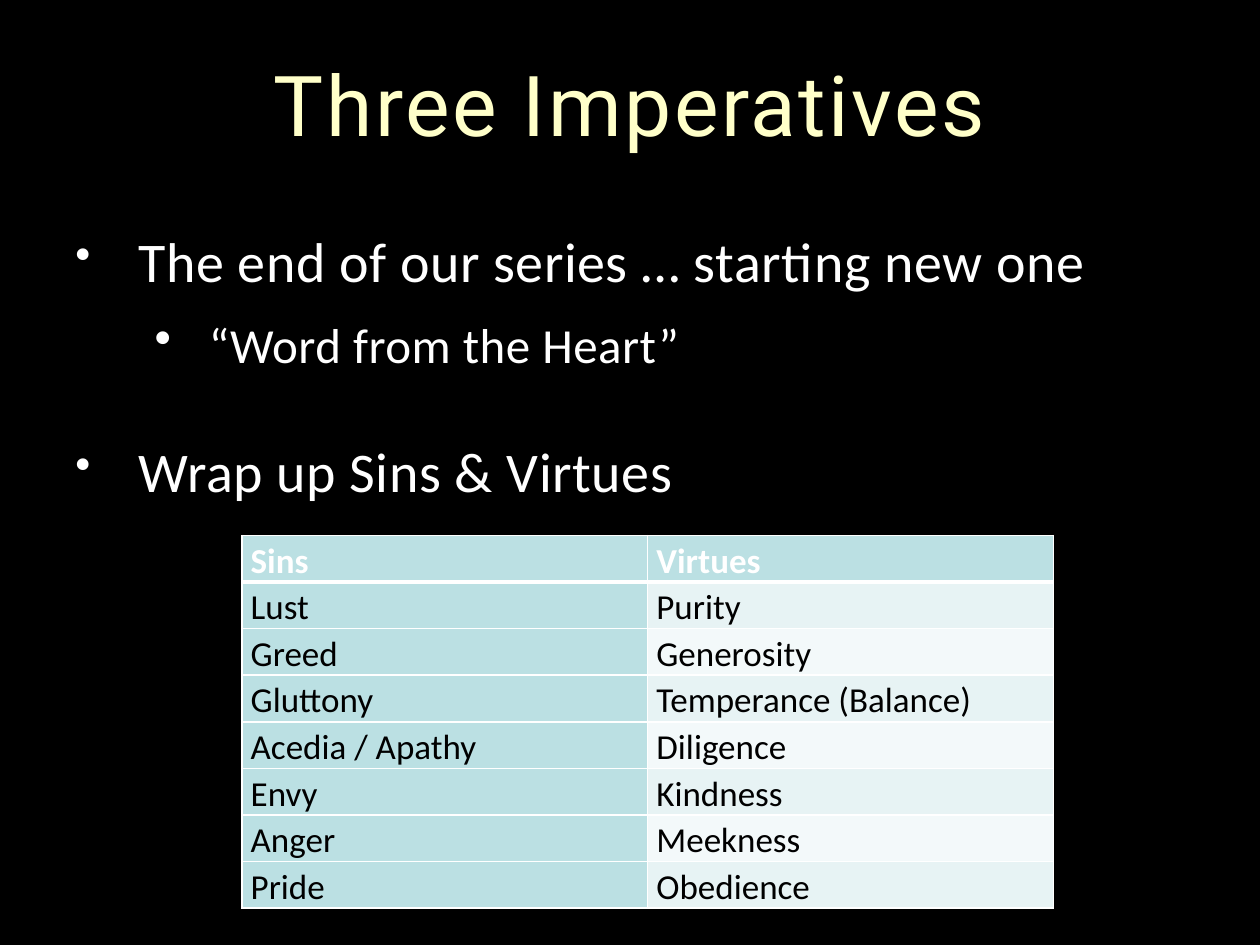
"""Build the Three Imperatives slide: title, bulleted points and a sins and virtues table."""
from lxml.etree import SubElement
from pptx import Presentation
from pptx.dml.color import RGBColor
from pptx.enum.text import MSO_ANCHOR, PP_ALIGN
from pptx.oxml.ns import qn
from pptx.util import Inches, Pt

THEME = {
    "background": "000000", "title": "FFFFC9", "light": "FFFFFF", "dark": "000000",
    "sin": "BBE0E3", "virtue": ("F3F9FA", "E7F3F4"),
    "title_font": "Roboto", "body_font": "Calibri",
    "title_size": 48, "point_size": 32, "detail_size": 28, "table_size": 20,
}
POINTS = [
    ("The end of our series … starting new one", 0),
    ("“Word from the Heart”", 1),
    ("Wrap up Sins & Virtues", 0),
]
LEVELS = [
    {"size": THEME["point_size"], "before": 36, "margin": 0.5, "indent": -0.5, "bullet": 80},
    {"size": THEME["detail_size"], "before": 12, "margin": 1.06, "indent": -0.43, "bullet": 100},
]
PAIRS = [
    ("Sins", "Virtues"),
    ("Lust", "Purity"),
    ("Greed", "Generosity"),
    ("Gluttony", "Temperance (Balance)"),
    ("Acedia / Apathy", "Diligence"),
    ("Envy", "Kindness"),
    ("Anger", "Meekness"),
    ("Pride", "Obedience"),
]
COLUMN, ROW = Inches(3.22), Inches(0.37)


def write(para, text, font, size, color, bold=False, spacing=0):
    span = para.add_run()
    span.text = text
    for name, value in {"name": font, "size": Pt(size), "bold": bold}.items():
        setattr(span.font, name, value)
    span.font.color.rgb = RGBColor.from_string(color)
    if spacing:
        span.font._element.set("spc", str(round(spacing * 100)))


def add_border(cell, side, width):
    line = SubElement(cell._tc.get_or_add_tcPr(), qn(f"a:ln{side}"), w=str(Pt(width)))
    fill = SubElement(line, qn("a:solidFill"))
    SubElement(fill, qn("a:srgbClr"), val=THEME["light"])


deck = Presentation()
deck.slide_width, deck.slide_height = Inches(10), Inches(7.5)
page = deck.slides.add_slide(deck.slide_layouts[5])
page.background.fill.solid()
page.background.fill.fore_color.rgb = RGBColor.from_string(THEME["background"])

title = page.shapes.title
place = {"left": 0, "top": Inches(0.3), "width": deck.slide_width, "height": Inches(1.03)}
for name, value in place.items():
    setattr(title, name, value)
title.text_frame.vertical_anchor = MSO_ANCHOR.MIDDLE
heading = title.text_frame.paragraphs[0]
heading.alignment = PP_ALIGN.CENTER
write(heading, "Three Imperatives", THEME["title_font"], THEME["title_size"],
      THEME["title"], spacing=1.5)

box = page.shapes.add_textbox(Inches(0.5), Inches(1.75), Inches(9.5), Inches(2.33))
frame = box.text_frame
frame.word_wrap = True
for index, (text, depth) in enumerate(POINTS):
    para = frame.add_paragraph() if index else frame.paragraphs[0]
    level = LEVELS[depth]
    para.level = depth
    para.space_before = Pt(level["before"])
    settings = para._p.get_or_add_pPr()
    settings.set("marL", str(Inches(level["margin"])))
    settings.set("indent", str(Inches(level["indent"])))
    SubElement(settings, qn("a:buSzPct"), val=str(level["bullet"] * 1000))
    SubElement(settings, qn("a:buChar"), char="•")
    write(para, text, THEME["body_font"], level["size"], THEME["light"], spacing=0.3)

table = page.shapes.add_table(len(PAIRS), 2, Inches(1.92), Inches(4.25),
                              2 * COLUMN, len(PAIRS) * ROW).table
for column in table.columns:
    column.width = COLUMN
for row_index, pair in enumerate(PAIRS):
    table.rows[row_index].height = ROW
    header = row_index == 0
    for column_index, text in enumerate(pair):
        cell = table.cell(row_index, column_index)
        margins = {"margin_left": Inches(0.07), "margin_right": Inches(0.07),
                   "margin_top": 0, "margin_bottom": 0}
        for name, value in margins.items():
            setattr(cell, name, value)
        for side in "LRTB":
            heavy = (header and side == "B") or (row_index == 1 and side == "T")
            add_border(cell, side, 3 if heavy else 1)
        plain = header or column_index == 0
        shade = THEME["sin"] if plain else THEME["virtue"][row_index % 2]
        cell.fill.solid()
        cell.fill.fore_color.rgb = RGBColor.from_string(shade)
        para = cell.text_frame.paragraphs[0]
        para.line_spacing, para.space_before = 1.1, Pt(4)
        write(para, text, THEME["body_font"], THEME["table_size"],
              THEME["light" if header else "dark"], bold=header)

deck.save("out.pptx")
